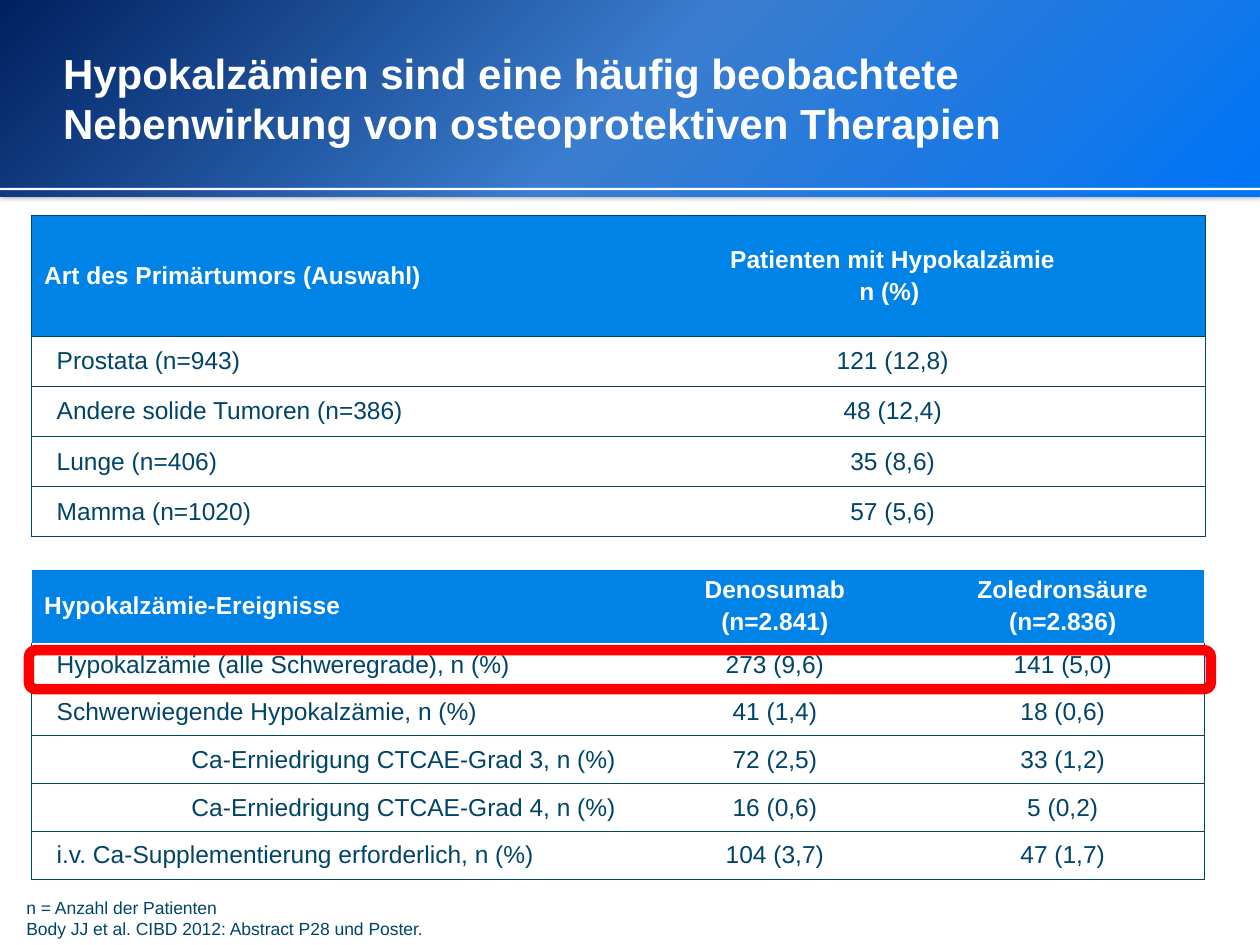
import copy
from dataclasses import dataclass

import pptx
import pptx.dml.color
import pptx.enum.shapes
import pptx.enum.text
import pptx.oxml
import pptx.oxml.ns
import pptx.util

Pt = pptx.util.Pt
Inches = pptx.util.Inches
Align = pptx.enum.text.PP_ALIGN
Anchor = pptx.enum.text.MSO_ANCHOR
Shape = pptx.enum.shapes.MSO_SHAPE
SLIDE_W, SLIDE_H = Inches(10), Inches(7.5)


@dataclass(frozen=True)
class Theme:
    font: str = "Arial"
    ink: str = "00446A"
    header: str = "0083E6"
    white: str = "FFFFFF"
    mark: str = "FF0000"
    banner: tuple = ((0, "002060"), (0.5, "3A7DCE"), (1, "0075F6"))
    title_size: float = 24
    table_size: float = 14
    note_size: float = 10
    rule: float = 0.75


@dataclass(frozen=True)
class Box:
    """Position and size in percent of the slide."""
    x: float
    y: float
    w: float
    h: float

    def emu(self) -> tuple:
        return across(self.x), down(self.y), across(self.w), down(self.h)


@dataclass(frozen=True)
class TableSpec:
    x: float
    y: float
    cols: tuple
    row_heights: tuple
    rows: tuple
    header_ruled: bool


THEME = Theme()


def across(percent: float) -> int:
    return round(SLIDE_W * percent / 100)


def down(percent: float) -> int:
    return round(SLIDE_H * percent / 100)


def rgb(value: str):
    return pptx.dml.color.RGBColor.from_string(value)


def style(p, size: float, color: str, bold: bool = False, align=Align.LEFT) -> None:
    p.alignment = align
    f = p.font
    f.name, f.size, f.bold = THEME.font, Pt(size), bold
    f.color.rgb = rgb(color)


def place_text(sp, box: Box, anchor):
    sp.left, sp.top, sp.width, sp.height = box.emu()
    tf = sp.text_frame
    tf.word_wrap = True
    tf.auto_size = pptx.enum.text.MSO_AUTO_SIZE.NONE
    tf.vertical_anchor = anchor
    tf.margin_left, tf.margin_right = 0, Inches(0.1)
    tf.margin_top = tf.margin_bottom = Inches(0.05)
    return tf


def add_block(slide, box: Box, fill: str = "", kind=Shape.RECTANGLE):
    sp = slide.shapes.add_shape(kind, *box.emu())
    sp.shadow.inherit = False
    sp.line.fill.background()
    if fill:
        sp.fill.solid()
        sp.fill.fore_color.rgb = rgb(fill)
    else:
        sp.fill.background()
    return sp


def add_banner(slide) -> None:
    # Base with a soft shadow below
    sp = add_block(slide, Box(0, 0, 100, 20.4), THEME.ink)
    effects = sp._element.spPr.find(pptx.oxml.ns.qn("a:effectLst"))
    effects.append(pptx.oxml.parse_xml(
        f'<a:outerShdw {pptx.oxml.ns.nsdecls("a")} blurRad="{Pt(3.1)}" dist="{Pt(1.8)}" '
        'dir="5400000" rotWithShape="0"><a:srgbClr val="000000">'
        '<a:alpha val="35000"/></a:srgbClr></a:outerShdw>'))
    # Diagonal three-stop gradient and white rule
    sp = add_block(slide, Box(0, 0, 100, 20.8))
    sp.fill.gradient()
    sp.fill.gradient_angle = 315
    stops = sp.fill._fill._gradFill.gsLst
    stops.append(copy.deepcopy(stops[0]))
    for stop, (position, color) in zip(sp.fill.gradient_stops, THEME.banner):
        stop.position = position
        stop.color.rgb = rgb(color)
    add_block(slide, Box(0, 19.87, 100, 0.27), THEME.white)


def set_borders(cell, sides: str) -> None:
    tcPr = cell._tc.get_or_add_tcPr()
    for side in "LRTB":
        paint = (f'<a:solidFill><a:srgbClr val="{THEME.ink}"/></a:solidFill>'
                 if side in sides else "<a:noFill/>")
        tcPr.append(pptx.oxml.parse_xml(
            f'<a:ln{side} {pptx.oxml.ns.nsdecls("a")} w="{Pt(THEME.rule)}">'
            f'{paint}</a:ln{side}>'))


def cell_sides(spec: TableSpec, r: int, c: int) -> str:
    if r == 0 and not spec.header_ruled:
        return ""
    sides = "B" if r == 1 and not spec.header_ruled else "TB"
    return sides + "L" * (c == 0) + "R" * (c == len(spec.cols) - 1)


def fill_cell(cell, text: str, is_header: bool, is_label: bool, sides: str) -> None:
    set_borders(cell, sides)
    if is_header:
        cell.fill.solid()
        cell.fill.fore_color.rgb = rgb(THEME.header)
    else:
        cell.fill.background()
    cell.vertical_anchor = Anchor.MIDDLE
    cell.margin_left = Inches(0.2 if is_label and not is_header else 0.1)
    cell.margin_right = Inches(0.1)
    cell.margin_top = cell.margin_bottom = Inches(0.05 if is_header else 0)
    cell.text = text
    align = Align.LEFT if is_label else Align.CENTER
    if text.startswith("Ca-"):  # sub-items sit at the right
        align = Align.RIGHT
    for p in cell.text_frame.paragraphs:
        style(p, THEME.table_size, THEME.white if is_header else THEME.ink, is_header, align)
        p.space_before = Pt(0.2 * THEME.table_size)


def add_grid(slide, spec: TableSpec) -> None:
    box = Box(spec.x, spec.y, sum(spec.cols), sum(spec.row_heights))
    table = slide.shapes.add_table(len(spec.rows), len(spec.cols), *box.emu()).table
    table.horz_banding = False
    for col, width in zip(table.columns, spec.cols):
        col.width = across(width)
    for row, height in zip(table.rows, spec.row_heights):
        row.height = down(height)
    for r, texts in enumerate(spec.rows):
        for c, text in enumerate(texts):
            fill_cell(table.cell(r, c), text, r == 0, c == 0, cell_sides(spec, r, c))


EVENTS = TableSpec(2.5, 60.27, (47.4, 23.2, 22.5), (7.73, 4.8) + (5.07,) * 4, (
    ("Hypokalzämie-Ereignisse", "Denosumab\n(n=2.841)", "Zoledronsäure\n(n=2.836)"),
    ("Hypokalzämie (alle Schweregrade), n (%)", "273 (9,6)", "141 (5,0)"),
    ("Schwerwiegende Hypokalzämie, n (%)", "41 (1,4)", "18 (0,6)"),
    ("Ca-Erniedrigung CTCAE-Grad 3, n (%)", "72 (2,5)", "33 (1,2)"),
    ("Ca-Erniedrigung CTCAE-Grad 4, n (%)", "16 (0,6)", "5 (0,2)"),
    ("i.v. Ca-Supplementierung erforderlich, n (%)", "104 (3,7)", "47 (1,7)"),
), header_ruled=False)

TUMORS = TableSpec(2.5, 22.8, (43.5, 49.7), (12.8,) + (5.3,) * 4, (
    ("Art des Primärtumors (Auswahl)", "Patienten mit Hypokalzämie\nn (%) "),
    ("Prostata (n=943)", "121 (12,8)"),
    ("Andere solide Tumoren (n=386)", "48 (12,4)"),
    ("Lunge (n=406)", "35 (8,6)"),
    ("Mamma (n=1020)", "57 (5,6)"),
), header_ruled=True)


def main() -> None:
    prs = pptx.Presentation()
    prs.slide_width, prs.slide_height = SLIDE_W, SLIDE_H
    slide = prs.slides.add_slide(prs.slide_layouts[5])
    add_banner(slide)

    # Title, brought in front of the banner
    title = slide.shapes.title
    slide.shapes._spTree.append(title._element)
    tf = place_text(title, Box(5, 2, 90, 16.67), Anchor.MIDDLE)
    tf.text = ("Hypokalzämien sind eine häufig beobachtete "
               "Nebenwirkung von osteoprotektiven Therapien")
    style(tf.paragraphs[0], THEME.title_size, THEME.white, bold=True)

    # Footnote
    box = Box(2.1, 91.07, 80.6, 8.93)
    tf = place_text(slide.shapes.add_textbox(*box.emu()), box, Anchor.BOTTOM)
    tf.text = "n = Anzahl der Patienten\nBody JJ et al. CIBD 2012: Abstract P28 und Poster."
    for p in tf.paragraphs:
        style(p, THEME.note_size, THEME.ink)

    # Tables and the highlighted row
    for spec in (EVENTS, TUMORS):
        add_grid(slide, spec)
    frame = add_block(slide, Box(2.3, 68.8, 93.8, 4.13), kind=Shape.ROUNDED_RECTANGLE)
    frame.line.color.rgb = rgb(THEME.mark)
    frame.line.width = Pt(6)

    prs.save("out.pptx")


if __name__ == "__main__":
    main()
